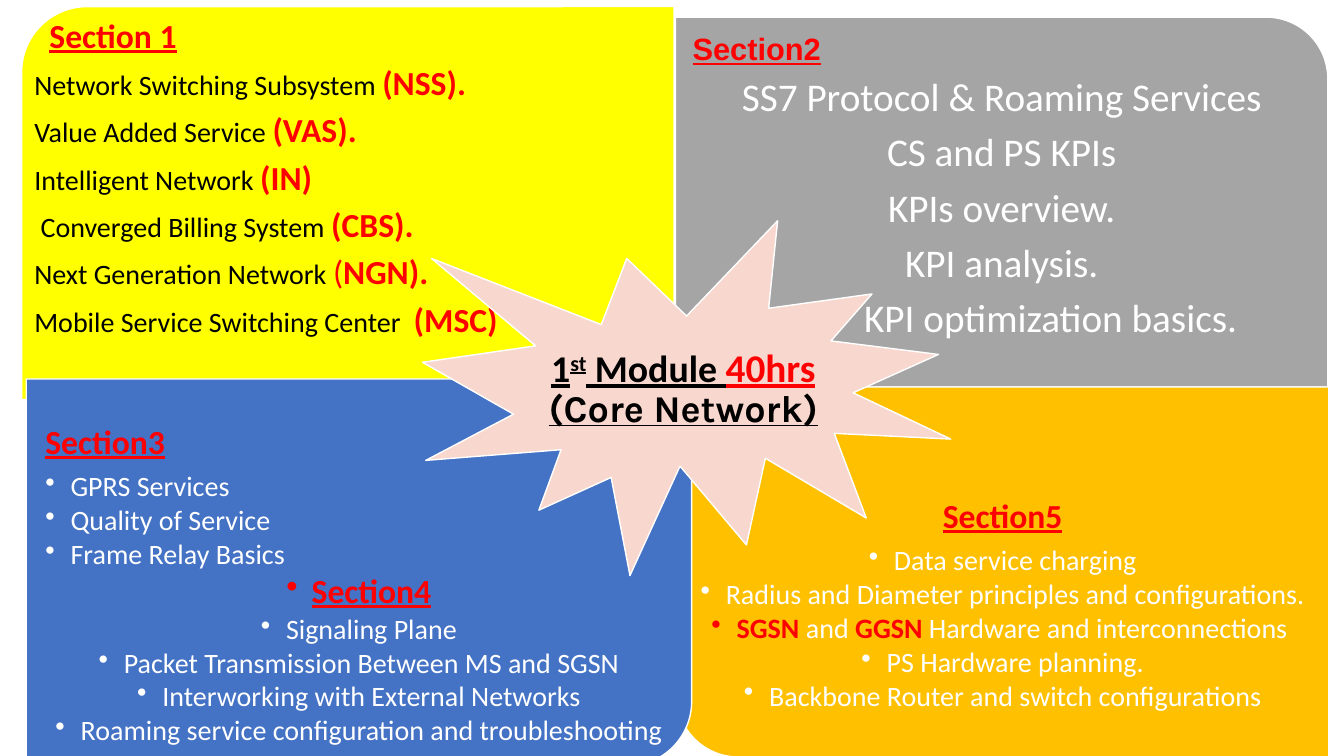
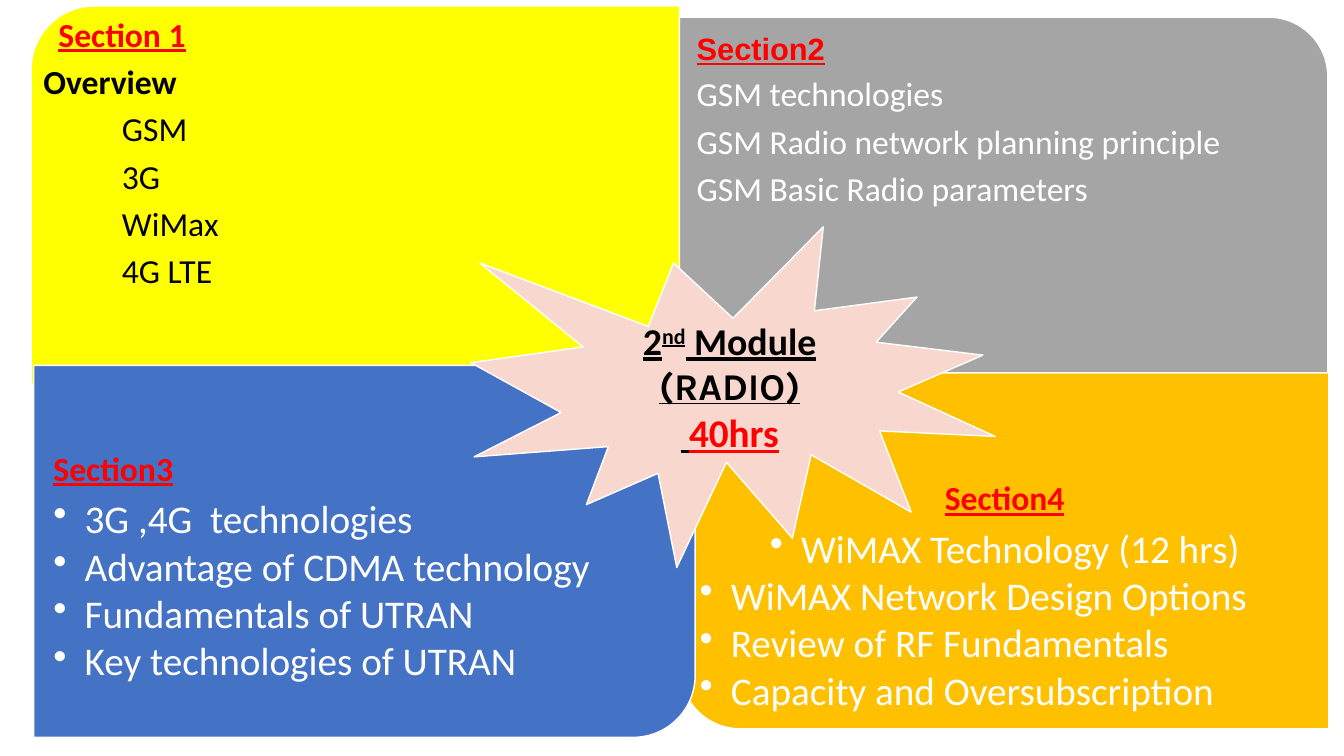
from dataclasses import dataclass

from lxml import etree
from pptx import Presentation
from pptx import util as u
from pptx.dml.color import RGBColor
from pptx.enum import shapes, text
from pptx.oxml.ns import qn

PX = u.Inches(1) // 100  # 100 px to the inch
COLORS = {
    "yellow": "FFFF00", "gray": "A5A5A5", "orange": "FFC000", "blue": "4472C4",
    "burst": "F8D7CE", "white": "FFFFFF", "black": "000000", "red": "FF0000",
}
CENTER = text.PP_ALIGN.CENTER
LEFT = text.PP_ALIGN.LEFT


@dataclass(frozen=True)
class Words:
    text: str
    size: int = 24
    color: str = "white"
    bold: bool = False
    underline: bool = False
    font: str = "Calibri"
    raised: bool = False


@dataclass(frozen=True)
class Line:
    words: tuple[Words, ...]
    align: text.PP_ALIGN = LEFT
    indent: int = 0
    bullet: bool = False
    tight: float = 0.9
    gap: float = 0.33  # space after, as a share of the text size


@dataclass(frozen=True)
class Quadrant:
    color: str
    turn: int  # degrees that bring the round corner outward
    box: tuple[int, int, int, int]
    inset: int
    lines: list[Line]
    lower: bool = False
    anchor: text.MSO_ANCHOR = text.MSO_ANCHOR.TOP
    foot: int = 0  # extra space below the text


@dataclass(frozen=True)
class Module:
    quadrants: list[Quadrant]
    burst_box: tuple[int, int, int, int]
    title: list[Line]


# Kinds of text line
def strong(words: str, size: int = 24) -> Words:
    return Words(words, size, "red", bold=True)


def heading(words: str, align: text.PP_ALIGN = LEFT, indent: int = 0,
            size: int = 24, font: str = "Calibri") -> Line:
    return Line((Words(words, size, "red", True, True, font),), align, indent)


def service(name: str, *short: Words) -> Line:
    return Line((Words(name, 20, "black"), *short))


def plain(words: str, size: int, color: str = "white",
          align: text.PP_ALIGN = LEFT, indent: int = 0) -> Line:
    return Line((Words(words, size, color),), align, indent)


def bullet(*words: Words, align: text.PP_ALIGN = LEFT) -> Line:
    indent = 31 if words[0].size == 28 else 25
    return Line(words, align, indent, bullet=True, gap=0.13)


def bullets(size: int, align: text.PP_ALIGN, *items: str) -> list[Line]:
    return [bullet(Words(item, size), align=align) for item in items]


def title_words(words: str, font: str = "Calibri", raised: bool = False) -> Words:
    return Words(words, 27, "black", True, True, font, raised)


def title_line(*words: Words, tight: float = 1.0) -> Line:
    return Line(words, CENTER, tight=tight, gap=0)


HOURS = Words("40hrs", 28, "red", True, True)
SECTION_1 = heading("Section 1", indent=15)
SECTION_2 = heading("Section2", size=22, font="Arial")
SECTION_3 = heading("Section3")


# Drawing
def rgb(name: str) -> RGBColor:
    return RGBColor.from_string(COLORS[name])


def write_lines(frame, lines: list[Line], inset: int, anchor: text.MSO_ANCHOR,
                foot: int = 0) -> None:
    frame.word_wrap = True
    frame.vertical_anchor = anchor
    frame.margin_left = frame.margin_right = frame.margin_top = inset * PX
    frame.margin_bottom = (inset + foot) * PX
    for number, line in enumerate(lines):
        paragraph = frame.paragraphs[0] if number == 0 else frame.add_paragraph()
        paragraph.alignment = line.align
        paragraph.line_spacing = line.tight
        paragraph.space_before = u.Pt(0)
        paragraph.space_after = u.Pt(line.gap * max(w.size for w in line.words))
        properties = paragraph._p.get_or_add_pPr()
        properties.set("marL", str(line.indent * PX))
        properties.set("indent", str(-line.indent * PX if line.bullet else 0))
        if line.bullet:
            etree.SubElement(properties, qn("a:buChar")).set("char", "•")
        for words in line.words:
            run = paragraph.add_run()
            run.text = words.text
            run.font.name = words.font
            run.font.size = u.Pt(words.size)
            run.font.bold = words.bold
            run.font.underline = words.underline
            run.font.color.rgb = rgb(words.color)
            if words.raised:
                run._r.get_or_add_rPr().set("baseline", "30000")


def add_panel(slide, kind: shapes.MSO_SHAPE, box: tuple[int, int, int, int],
              color: str, turn: int = 0):
    left, top, width, height = box
    if turn % 180:  # a quarter turn swaps the sides about the centre
        left, top = left + (width - height) // 2, top + (height - width) // 2
        width, height = height, width
    panel = slide.shapes.add_shape(kind, left * PX, top * PX, width * PX, height * PX)
    panel.rotation = turn
    panel.shadow.inherit = False
    panel.fill.solid()
    panel.fill.fore_color.rgb = rgb(color)
    panel.line.color.rgb = rgb("white")
    panel.line.width = u.Pt(1)
    return panel


def add_quadrant(slide, part: Quadrant) -> None:
    add_panel(slide, shapes.MSO_SHAPE.ROUND_1_RECTANGLE, part.box, part.color, part.turn)
    # Text fills the outer three quarters of the panel
    left, top, width, height = part.box
    text_height = height * 3 // 4
    if part.lower:
        top += height - text_height
    label = slide.shapes.add_textbox(left * PX, top * PX, width * PX, text_height * PX)
    write_lines(label.text_frame, part.lines, part.inset, part.anchor, part.foot)


def add_module(deck, module: Module) -> None:
    slide = deck.slides.add_slide(deck.slide_layouts[6])
    for part in module.quadrants:
        add_quadrant(slide, part)
    burst = add_panel(slide, shapes.MSO_SHAPE.EXPLOSION1, module.burst_box, "burst")
    write_lines(burst.text_frame, module.title, 11, text.MSO_ANCHOR.MIDDLE)


def upper_left(box: tuple[int, int, int, int], lines: list[Line]) -> Quadrant:
    return Quadrant("yellow", 270, box, 12, lines)


def upper_right(box: tuple[int, int, int, int], lines: list[Line]) -> Quadrant:
    return Quadrant("gray", 0, box, 17, lines)


def lower_right(box: tuple[int, int, int, int], lines: list[Line]) -> Quadrant:
    return Quadrant("orange", 180, box, 19, lines, lower=True)


def lower_left(box: tuple[int, int, int, int], lines: list[Line],
               foot: int = 0) -> Quadrant:
    return Quadrant("blue", 90, box, 19, lines, True, text.MSO_ANCHOR.BOTTOM, foot)


# Content
CORE = Module(
    [
        upper_left((22, 7, 647, 390), [
            SECTION_1,
            service("Network Switching Subsystem ", strong("(NSS).")),
            service("Value Added Service ", strong("(VAS).")),
            service("Intelligent Network ", strong("(IN)")),
            service(" Converged Billing System ", strong("(CBS).")),
            service("Next Generation Network ", Words("(", 24, "red"), strong("NGN).")),
            service("Mobile Service Switching Center  ", strong("(MSC)")),
        ]),
        upper_right((670, 17, 647, 367), [
            SECTION_2,
            *(plain(topic, 28, align=CENTER) for topic in (
                "SS7 Protocol & Roaming Services", "CS and PS KPIs",
                "KPIs overview.", "KPI analysis.")),
            plain("KPI optimization basics.", 28, align=CENTER, indent=97),
        ]),
        lower_right((671, 384, 647, 367), [
            heading("Section5", CENTER),
            *bullets(20, CENTER, "Data service charging",
                     "Radius and Diameter principles and configurations."),
            bullet(strong("SGSN ", 20), Words("and ", 20), strong("GGSN", 20),
                   Words(" Hardware and interconnections ", 20), align=CENTER),
            *bullets(20, CENTER, "PS Hardware planning.",
                     "Backbone Router and switch configurations"),
        ]),
        lower_left((26, 376, 660, 384), [
            SECTION_3,
            *bullets(20, LEFT, "GPRS Services", "Quality of Service",
                     "Frame Relay Basics"),
            bullet(Words("Section4", 24, "red", True, True), align=CENTER),
            *bullets(20, CENTER, "Signaling Plane",
                     "Packet Transmission Between MS and SGSN",
                     "Interworking with External Networks",
                     "Roaming service configuration and troubleshooting"),
        ]),
    ],
    (419, 219, 524, 352),
    [
        title_line(title_words("1"), title_words("st", raised=True),
                   title_words(" Module "), HOURS),
        title_line(title_words("(Core Network)", "Karla"), tight=0.9),
    ],
)

RADIO = Module(
    [
        upper_left((31, 6, 643, 375), [
            SECTION_1,
            Line((Words("Overview", 24, "black", bold=True),)),
            *(plain(network, 24, "black", indent=78)
              for network in ("GSM", "3G", "WiMax", "4G LTE")),
        ]),
        upper_right((674, 17, 643, 353), [
            SECTION_2,
            *(plain(topic, 24) for topic in (
                "GSM technologies", "GSM Radio network planning principle",
                "GSM Basic Radio parameters")),
        ]),
        lower_right((675, 370, 643, 353), [
            heading("Section4", CENTER),
            *bullets(28, CENTER, "WiMAX Technology (12 hrs)"),
            *bullets(28, LEFT, "WiMAX Network Design Options",
                     "Review of RF Fundamentals", "Capacity and Oversubscription"),
        ]),
        lower_left((34, 363, 656, 369), [
            SECTION_3,
            *bullets(28, LEFT, "3G ,4G  technologies", "Advantage of CDMA technology",
                     "Fundamentals of UTRAN", "Key technologies of UTRAN"),
        ], foot=34),
    ],
    (467, 225, 520, 338),
    [
        title_line(title_words("2"), title_words("nd", raised=True),
                   title_words(" Module")),
        title_line(title_words("(RADIO)", "Karla")),
        title_line(title_words(" "), HOURS),
    ],
)


def main() -> None:
    deck = Presentation()
    deck.slide_width, deck.slide_height = 1333 * PX, 750 * PX
    for module in (CORE, RADIO):
        add_module(deck, module)
    deck.save("out.pptx")


if __name__ == "__main__":
    main()
